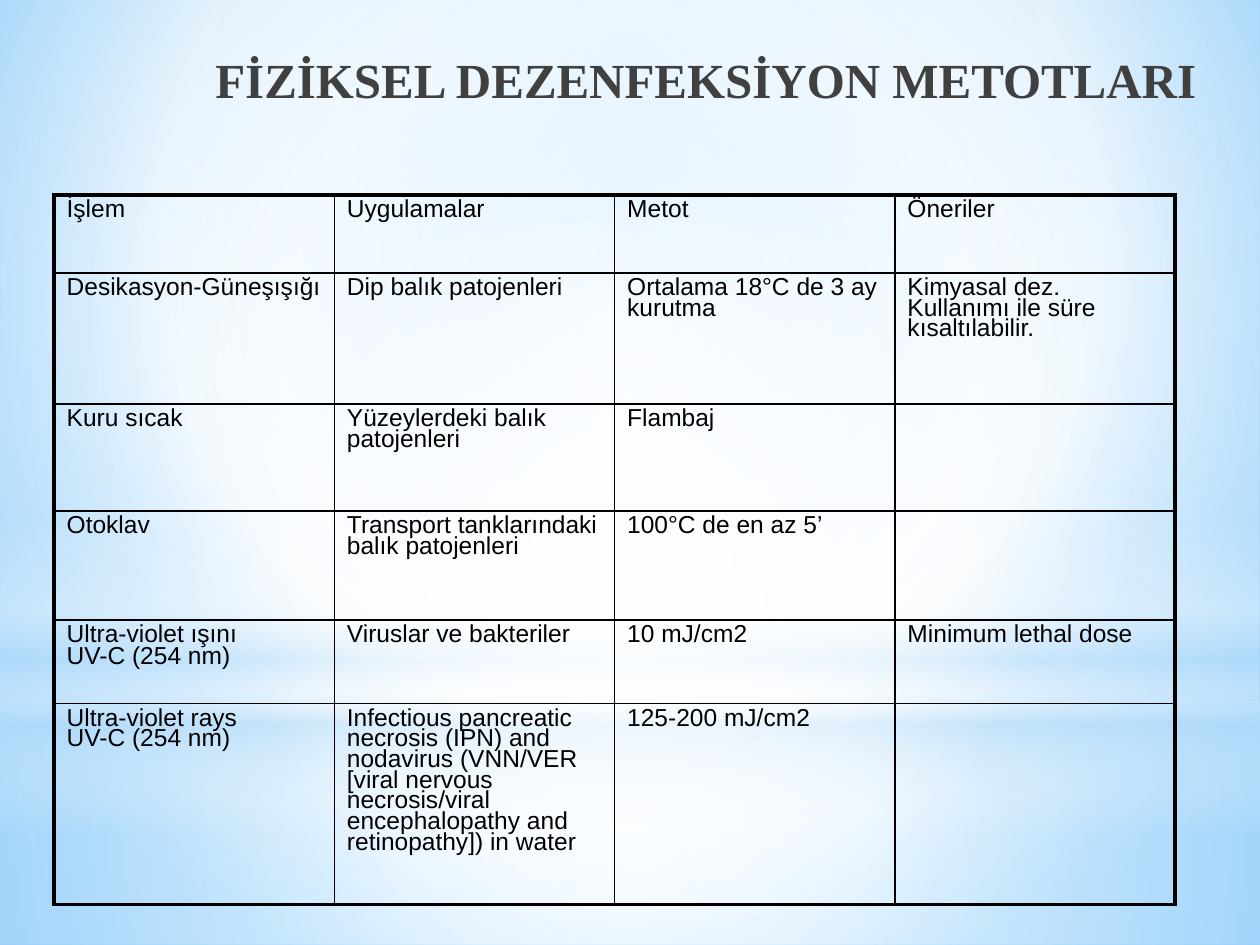
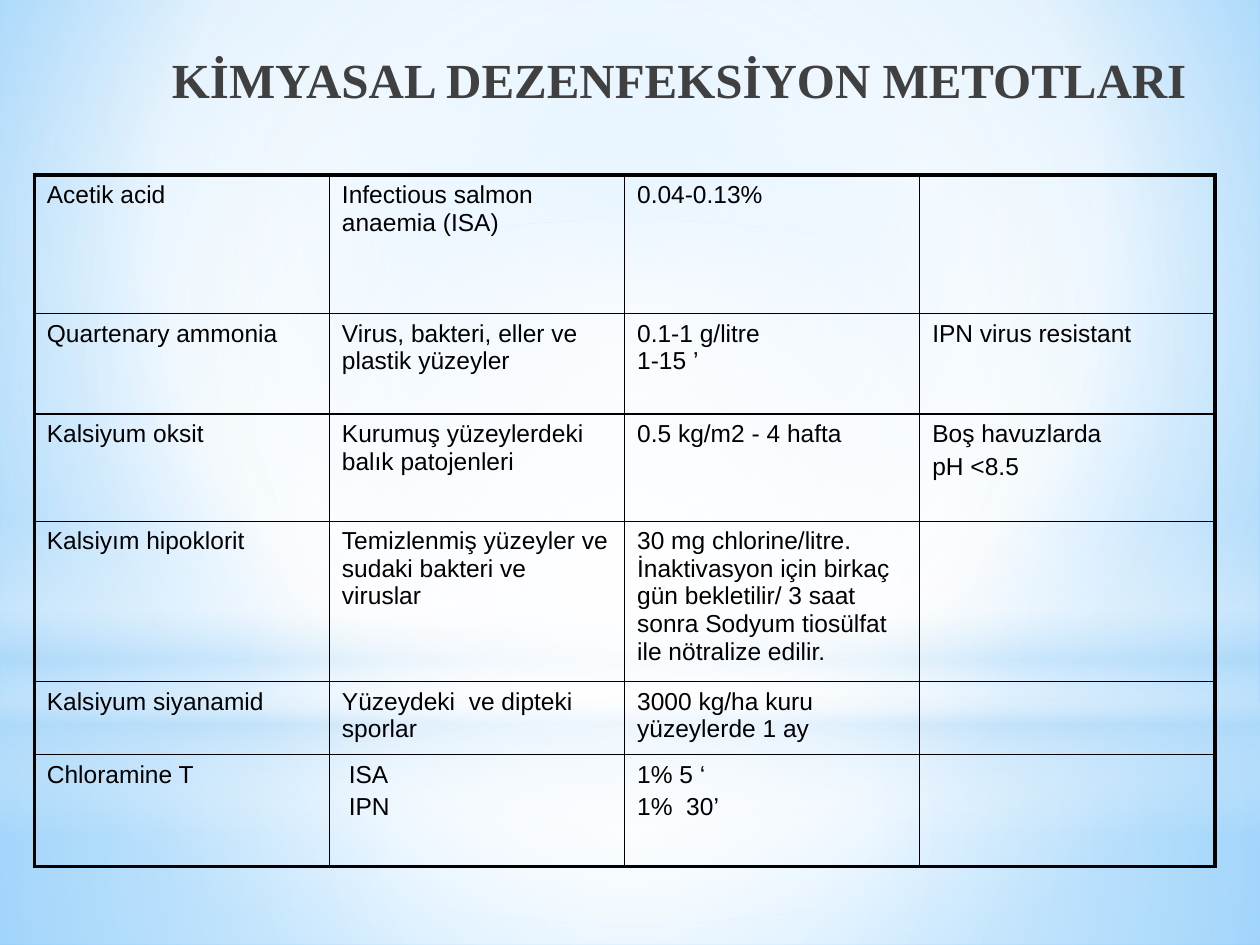
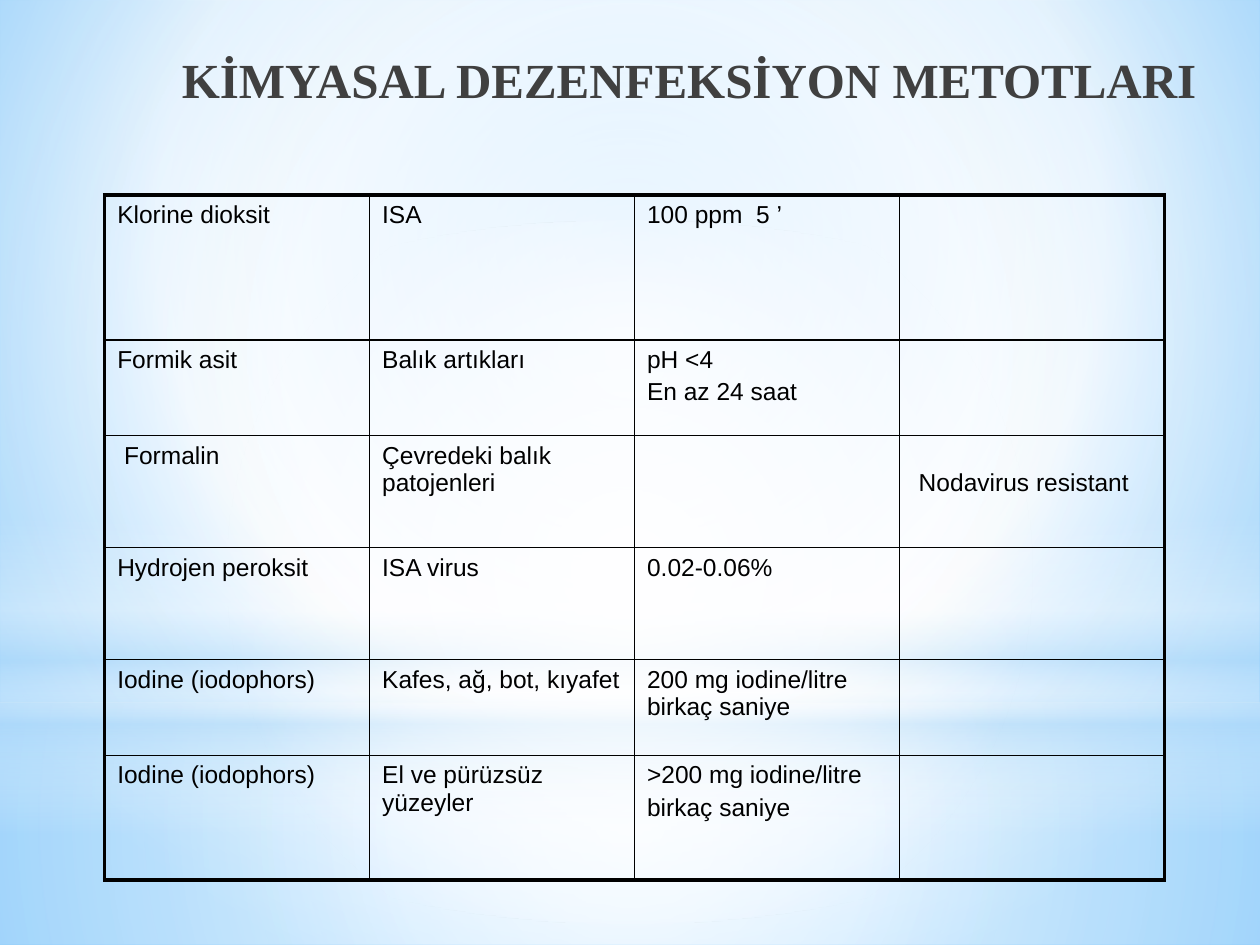
from lxml import etree
from pptx import Presentation
from pptx.dml.color import RGBColor
from pptx.enum.shapes import MSO_SHAPE
from pptx.enum.text import MSO_ANCHOR, PP_ALIGN
from pptx.oxml.ns import qn
from pptx.util import Cm, Pt

RECTANGLE, OVAL = MSO_SHAPE.RECTANGLE, MSO_SHAPE.OVAL
TOP, RIGHT = MSO_ANCHOR.TOP, PP_ALIGN.RIGHT

# Shared style
WIDTH, HEIGHT = 25.4, 19.05
BLACK, TITLE_COLOR = "000000", "404040"
TITLE_FONT, TABLE_FONT = "Times New Roman", "Arial"
OUTER_BORDER, INNER_BORDER = 2.25, 1
COLUMN_COUNT = 4
LINE_HEIGHT = 0.55
CENTER = (50, 50, 50, 50)

# Gradient stops: position %, colour, opacity %
BACKGROUND_STOPS = [(0, "9ED5FF", 100), (60, "FFFFFF", 100), (100, "5BB9FF", 100)]
BACKGROUND_FOCUS = (20, 10, 20, 60)

# Backdrop: shape, top, height, stops, focus (None for a vertical gradient)
BACKDROP = [
    (RECTANGLE, 14.17, 4.88,
     [(0, "FFFFFF", 91), (37, "FFFFFF", 76), (100, "B4DCFA", 79)], CENTER),
    (RECTANGLE, 0, 14.17,
     [(0, "FFFFFF", 89), (48, "FFFFFF", 62), (100, "B4DCFA", 79)], CENTER),
    (RECTANGLE, 10.46, 6.35,
     [(0, "FFFFFF", 0), (29, "FFFFFF", 30), (45, "B4DCFA", 40),
      (55, "FFFFFF", 26), (65, "B4DCFA", 60), (100, "FFFFFF", 0)], None),
    (OVAL, 4.45, 14.17, [(0, "FFFFFF", 100), (56, "FFFFFF", 0)], CENTER),
]

# Slides: lengths in cm; in a cell \n starts a paragraph, \v breaks a line
SLIDES = [
    {
        "title": "FİZİKSEL DEZENFEKSİYON METOTLARI",
        "title_box": (1.5, 0.71, 22.86, 2.59),
        "table_box": (1.09, 3.93, 22.6),
        "row_heights": [1.57, 2.64, 2.16, 2.2, 1.68, 4.06],
        "line_spacing": 0.75,
        "space_before": 0.7,
        "rows": [
            ("İşlem", "Uygulamalar", "Metot", "Öneriler"),
            ("Desikasyon-Güneşışığı", "Dip balık patojenleri",
             "Ortalama 18°C de 3 ay kurutma",
             "Kimyasal dez. Kullanımı ile süre kısaltılabilir."),
            ("Kuru sıcak", "Yüzeylerdeki balık patojenleri", "Flambaj", ""),
            ("Otoklav", "Transport tanklarındaki balık patojenleri",
             "100°C de en az 5’", ""),
            ("Ultra-violet ışını\nUV-C (254 nm)", "Viruslar ve bakteriler",
             "10 mJ/cm2", "Minimum lethal dose"),
            ("Ultra-violet rays\vUV-C (254 nm)",
             "Infectious pancreatic necrosis (IPN) and nodavirus (VNN/VER "
             "[viral nervous necrosis/viral encephalopathy and retinopathy]) in water",
             "125-200 mJ/cm2", ""),
        ],
    },
    {
        "title": "KİMYASAL DEZENFEKSİYON METOTLARI",
        "title_box": (1.3, 0.71, 22.86, 2.01),
        "table_box": (0.69, 3.53, 23.8),
        "row_heights": [2.79, 2.03, 2.16, 3.23, 1.47, 2.26],
        "line_spacing": 1.0,
        "space_before": 2.8,
        "rows": [
            ("Acetik acid", "Infectious salmon anaemia (ISA)", "0.04-0.13%", ""),
            ("Quartenary ammonia", "Virus, bakteri, eller ve plastik yüzeyler",
             "0.1-1 g/litre\v1-15 ’", "IPN virus resistant"),
            ("Kalsiyum oksit", "Kurumuş yüzeylerdeki balık patojenleri",
             "0.5 kg/m2 - 4 hafta", "Boş havuzlarda\npH <8.5"),
            ("Kalsiyım hipoklorit",
             "Temizlenmiş yüzeyler ve sudaki bakteri ve viruslar",
             "30 mg chlorine/litre. İnaktivasyon için birkaç gün bekletilir/ "
             "3 saat sonra Sodyum tiosülfat ile nötralize edilir.", ""),
            ("Kalsiyum siyanamid", "Yüzeydeki  ve dipteki sporlar",
             "3000 kg/ha kuru yüzeylerde 1 ay", ""),
            ("Chloramine T", " ISA\n IPN", "1% 5 ‘\n1%  30’", ""),
        ],
    },
    {
        "title": "KİMYASAL DEZENFEKSİYON METOTLARI",
        "title_box": (1.5, 0.71, 22.86, 2.59),
        "table_box": (2.11, 3.93, 21.36),
        "row_heights": [2.92, 1.93, 2.26, 2.26, 1.93, 2.51],
        "line_spacing": 1.0,
        "space_before": 2.8,
        "lowered_cells": [(2, 3)],
        "rows": [
            ("Klorine dioksit", "ISA", "100 ppm  5 ’", ""),
            ("Formik asit", "Balık artıkları", "pH <4\nEn az 24 saat", ""),
            (" Formalin", "Çevredeki balık patojenleri", "", " Nodavirus resistant"),
            ("Hydrojen peroksit", "ISA virus", "0.02-0.06%", ""),
            ("Iodine (iodophors)", "Kafes, ağ, bot, kıyafet",
             "200 mg iodine/litre birkaç saniye", ""),
            ("Iodine (iodophors)", "El ve pürüzsüz yüzeyler",
             ">200 mg iodine/litre\nbirkaç saniye", ""),
        ],
    },
]


def color(hex_string):
    return RGBColor.from_string(hex_string)


def style_runs(paragraph, font_name, size, hex_string, bold=False):
    for run in paragraph.runs:
        run.font.name = font_name
        run.font.size = Pt(size)
        run.font.bold = bold
        run.font.color.rgb = color(hex_string)


def set_gradient(fill, parent, stops, focus):
    """Fill with the stops: circular around focus, or top to bottom without one."""
    fill.gradient()
    gradient = parent.find(".//" + qn("a:gradFill"))
    for child in list(gradient):
        gradient.remove(child)
    stop_list = etree.SubElement(gradient, qn("a:gsLst"))
    for position, hex_string, opacity in stops:
        stop = etree.SubElement(stop_list, qn("a:gs"), pos=str(position * 1000))
        stop_color = etree.SubElement(stop, qn("a:srgbClr"), val=hex_string)
        if opacity < 100:
            etree.SubElement(stop_color, qn("a:alpha"), val=str(opacity * 1000))
    if focus is None:
        etree.SubElement(gradient, qn("a:lin"), ang="5400000", scaled="0")
    else:
        circle = etree.SubElement(gradient, qn("a:path"), {"path": "circle"})
        sides = {side: str(value * 1000) for side, value in zip("ltrb", focus)}
        etree.SubElement(circle, qn("a:fillToRect"), sides)


def build_master(master, slide):
    """Set the background and move the backdrop shapes behind all slides."""
    set_gradient(master.background.fill, master.element.find(".//" + qn("p:bgPr")),
                 BACKGROUND_STOPS, BACKGROUND_FOCUS)
    for index, (kind, top, height, stops, focus) in enumerate(BACKDROP):
        shape = slide.shapes.add_shape(kind, 0, Cm(top), Cm(WIDTH), Cm(height))
        shape.shadow.inherit = False
        shape.line.fill.background()
        set_gradient(shape.fill, shape.element.spPr, stops, focus)
        shape.name = f"Backdrop {index + 1}"
        shape.element.nvSpPr.cNvPr.set("id", str(100 + index))
        master.shapes.element.insert(2 + index, shape.element)


def add_title(slide, text, box):
    text_frame = slide.shapes.add_textbox(*map(Cm, box)).text_frame
    text_frame.word_wrap = True
    text_frame.vertical_anchor = TOP
    text_frame.margin_top = Cm(0.28)
    text_frame.text = text
    paragraph = text_frame.paragraphs[0]
    paragraph.alignment = RIGHT
    style_runs(paragraph, TITLE_FONT, 28, TITLE_COLOR, bold=True)


def set_borders(cell, row, column, row_count):
    outer_sides = [("a:lnL", column == 0), ("a:lnR", column == COLUMN_COUNT - 1),
                   ("a:lnT", row == 0), ("a:lnB", row == row_count - 1)]
    properties = cell._tc.get_or_add_tcPr()
    for index, (tag, is_outer) in enumerate(outer_sides):
        width = Pt(OUTER_BORDER if is_outer else INNER_BORDER)
        line = etree.Element(qn(tag), w=str(int(width)))
        line_fill = etree.SubElement(line, qn("a:solidFill"))
        etree.SubElement(line_fill, qn("a:srgbClr"), val=BLACK)
        properties.insert(index, line)


def add_methods_table(slide, content):
    rows, row_heights = content["rows"], content["row_heights"]
    left, top, width = content["table_box"]
    table = slide.shapes.add_table(len(rows), COLUMN_COUNT, Cm(left), Cm(top),
                                   Cm(width), Cm(sum(row_heights))).table
    table.first_row = table.horz_banding = False
    for column in table.columns:
        column.width = Cm(width / COLUMN_COUNT)
    for row_index, texts in enumerate(rows):
        table.rows[row_index].height = Cm(row_heights[row_index])
        for column_index, text in enumerate(texts):
            cell = table.cell(row_index, column_index)
            cell.fill.background()
            set_borders(cell, row_index, column_index, len(rows))
            if (row_index, column_index) in content.get("lowered_cells", []):
                cell.margin_top += Cm(LINE_HEIGHT)
            cell.text_frame.text = text
            for number, paragraph in enumerate(cell.text_frame.paragraphs):
                paragraph.line_spacing = content["line_spacing"]
                if number:
                    paragraph.space_before = Pt(content["space_before"])
                style_runs(paragraph, TABLE_FONT, 14, BLACK)


def main():
    presentation = Presentation()
    presentation.slide_width, presentation.slide_height = Cm(WIDTH), Cm(HEIGHT)
    blank_layout = presentation.slide_layouts[6]
    for index, content in enumerate(SLIDES):
        slide = presentation.slides.add_slide(blank_layout)
        if index == 0:
            build_master(presentation.slide_master, slide)
        add_title(slide, content["title"], content["title_box"])
        add_methods_table(slide, content)
    presentation.save("out.pptx")


if __name__ == "__main__":
    main()
